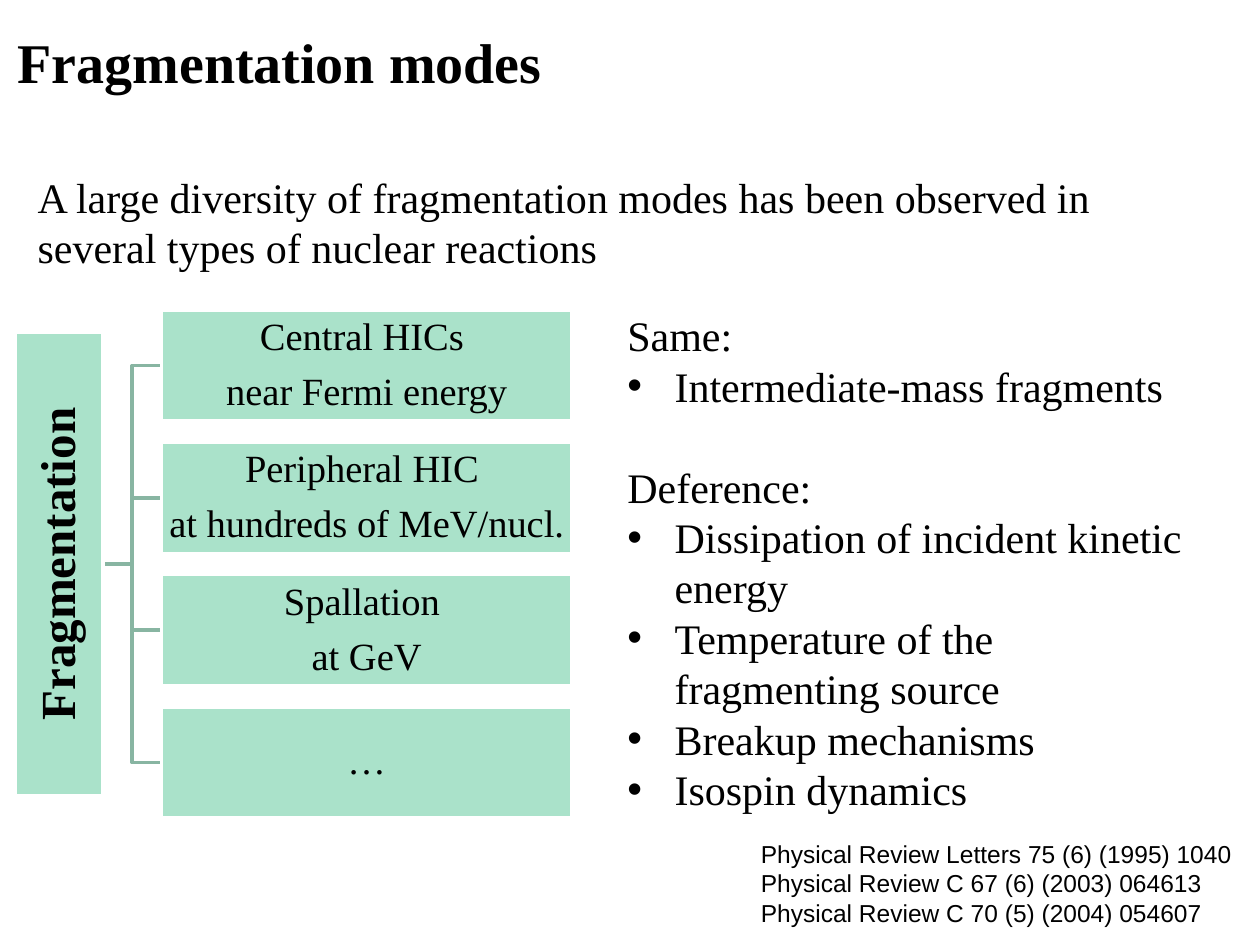
from lxml.etree import SubElement
from pptx import Presentation
from pptx.dml.color import RGBColor
from pptx.enum.shapes import MSO_SHAPE
from pptx.enum.text import MSO_ANCHOR, PP_ALIGN
from pptx.oxml.ns import qn
from pptx.util import Pt

COLORS = {"text": "000000", "box": "AAE2CA", "edge": "FFFFFF", "branch": "88B5A2"}
SERIF = "Times New Roman"
MODES = [
    ["Central HICs ", "near Fermi energy"],
    ["Peripheral HIC ", "at hundreds of MeV/nucl."],
    ["Spallation ", "at GeV"],
    ["…"],
]
REFERENCES = [
    "Physical Review Letters 75 (6) (1995) 1040",
    "Physical Review C 67 (6) (2003) 064613",
    "Physical Review C 70 (5) (2004) 054607",
]
DIFFERENCES = [
    "Dissipation of incident kinetic energy",
    "Temperature of the fragmenting source",
    "Breakup mechanisms",
    "Isospin dynamics",
]


def rgb(name):
    return RGBColor.from_string(COLORS[name])


def add_text(tf, text, size=24, font=SERIF, bold=False, align=PP_ALIGN.LEFT,
             bullet=False, before=0, after=0, spacing=None):
    p = tf.paragraphs[0]
    if p.runs:
        p = tf.add_paragraph()
    p.alignment = align
    p.space_before, p.space_after = Pt(before), Pt(after)
    if spacing:
        p.line_spacing = spacing
    if bullet:
        pPr = p._p.get_or_add_pPr()
        pPr.set("marL", str(Pt(27)))
        pPr.set("indent", str(-Pt(27)))
        SubElement(pPr, qn("a:buFont")).set("typeface", "Arial")
        SubElement(pPr, qn("a:buChar")).set("char", "•")
    r = p.add_run()
    r.text = text
    r.font.name, r.font.size, r.font.bold = font, Pt(size), bold
    r.font.color.rgb = rgb("text")


def add_box(s, x, y, w, h, wrap=True, anchor=MSO_ANCHOR.TOP):
    tf = s.shapes.add_textbox(Pt(x), Pt(y), Pt(w), Pt(h)).text_frame
    tf.word_wrap = wrap
    tf.vertical_anchor = anchor
    return tf


def add_node(s, cx, cy, w, h, lines, size=22, bold=False, rotation=0):
    sp = s.shapes.add_shape(MSO_SHAPE.RECTANGLE, Pt(cx - w / 2), Pt(cy - h / 2), Pt(w), Pt(h))
    sp.rotation = rotation
    sp.shadow.inherit = False
    sp.fill.solid()
    sp.fill.fore_color.rgb = rgb("box")
    sp.line.color.rgb = rgb("edge")
    sp.line.width = Pt(2)
    tf = sp.text_frame
    tf.word_wrap = True
    tf.vertical_anchor = MSO_ANCHOR.MIDDLE
    tf.margin_left = tf.margin_right = tf.margin_top = tf.margin_bottom = Pt(1.2)
    for line in lines:
        add_text(tf, line, size=size, bold=bold, align=PP_ALIGN.CENTER,
                 after=0.35 * size, spacing=0.9)


def add_branch(s, x1, y1, x2, y2):
    mid = (x1 + x2) / 2
    builder = s.shapes.build_freeform(Pt(x1), Pt(y1))
    builder.add_line_segments([(Pt(mid), Pt(y1)), (Pt(mid), Pt(y2)), (Pt(x2), Pt(y2))],
                              close=False)
    sp = builder.convert_to_shape()
    sp.shadow.inherit = False
    sp.fill.background()
    sp.line.color.rgb = rgb("branch")
    sp.line.width = Pt(2)


def add_tree(s):
    root_x, root_y, root_w, root_h = 33.8, 322.3, 50.4, 265
    left, width, height, pitch = 92.2, 234.7, 63.4, 75.6
    centers = [root_y + (i - (len(MODES) - 1) / 2) * pitch for i in range(len(MODES))]
    for cy in reversed(centers):
        add_branch(s, root_x + root_w / 2, root_y, left, cy)
    add_node(s, root_x, root_y, root_h, root_w, ["Fragmentation"],
             size=28, bold=True, rotation=270)
    for cy, lines in zip(centers, MODES):
        add_node(s, left + width / 2, cy, width, height, lines)


def main():
    prs = Presentation()
    prs.slide_width, prs.slide_height = Pt(720), Pt(540)
    s = prs.slides.add_slide(prs.slide_layouts[6])

    title = add_box(s, 2.9, 3.6, 663, 62.6, anchor=MSO_ANCHOR.MIDDLE)
    add_text(title, "Fragmentation modes", size=32, bold=True)

    references = add_box(s, 427.7, 475.9, 285, 58.3, wrap=False)
    for reference in REFERENCES:
        add_text(references, reference, size=14, font="Arial")

    intro = add_box(s, 14.4, 94.3, 686, 65.5)
    add_text(intro, "A large diversity of fragmentation modes has been observed in "
                    "several types of nuclear reactions")

    add_tree(s)

    comparison = add_box(s, 351.4, 173.5, 340, 327)
    add_text(comparison, "Same:")
    add_text(comparison, "Intermediate-mass fragments", bullet=True)
    add_text(comparison, "Deference:", before=28.8)
    for difference in DIFFERENCES:
        add_text(comparison, difference, bullet=True)

    prs.save("out.pptx")


if __name__ == "__main__":
    main()
